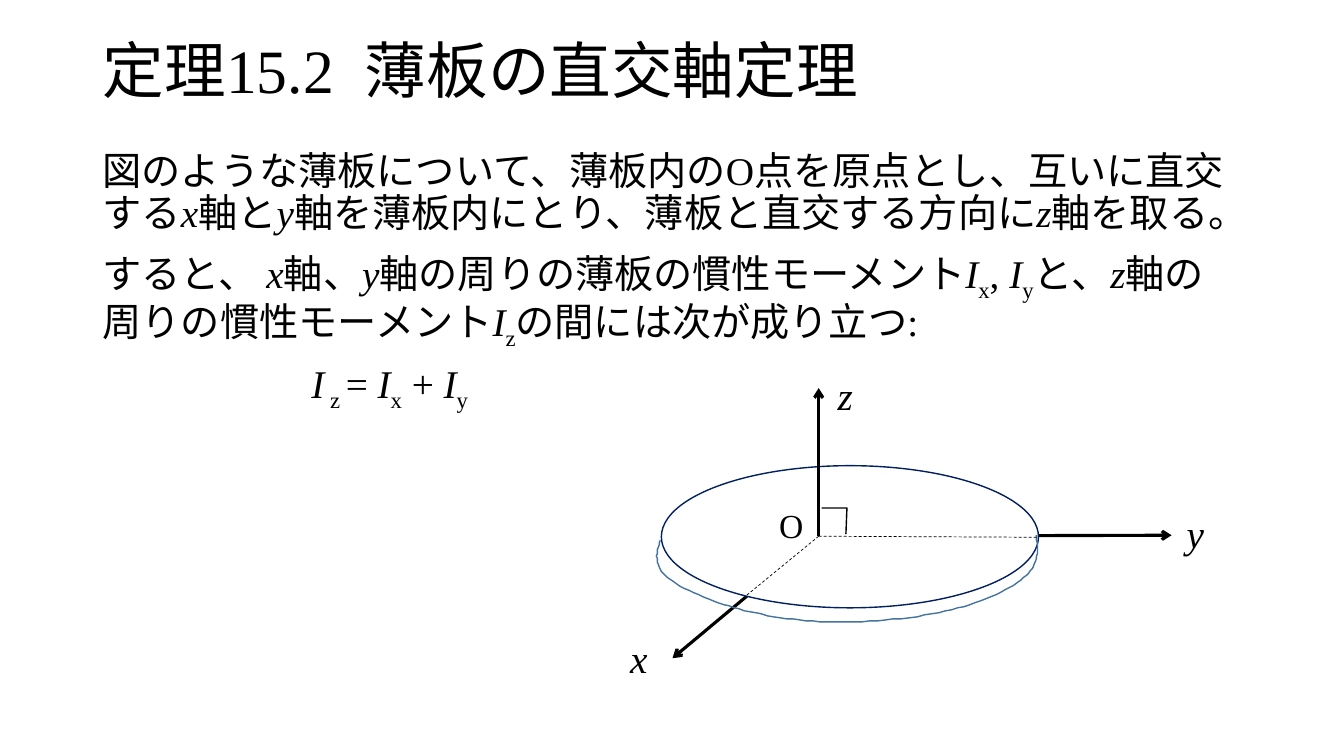
from lxml import etree
from pptx import Presentation
from pptx.dml.color import RGBColor
from pptx.enum.dml import MSO_LINE
from pptx.enum.shapes import MSO_CONNECTOR, MSO_SHAPE
from pptx.enum.text import MSO_ANCHOR, MSO_AUTO_SIZE, PP_ALIGN
from pptx.oxml.ns import qn
from pptx.util import Pt

PX = 9144  # 100 px to the inch
BLACK = RGBColor(0x00, 0x00, 0x00)
WHITE = RGBColor(0xFF, 0xFF, 0xFF)
NAVY = RGBColor(0x00, 0x20, 0x60)
STEEL = RGBColor(0x43, 0x73, 0x9E)
FONT = "Times New Roman"
STRAIGHT, OVAL = MSO_CONNECTOR.STRAIGHT, MSO_SHAPE.OVAL
LEFT, MIDDLE = PP_ALIGN.LEFT, MSO_ANCHOR.MIDDLE
GROW, DASH = MSO_AUTO_SIZE.SHAPE_TO_FIT_TEXT, MSO_LINE.DASH
PLAIN, ITALIC, SUB = "plain", "italic", "sub"

STATEMENT = [
    [("図のような薄板について、薄板内のO点を原点とし、互いに直交する", PLAIN), ("x", ITALIC),
     ("軸と", PLAIN), ("y", ITALIC), ("軸を薄板内にとり、薄板と直交する方向に", PLAIN),
     ("z", ITALIC), ("軸を取る。", PLAIN)],
    [("すると、", PLAIN), (" x", ITALIC), ("軸、", PLAIN), ("y", ITALIC),
     ("軸の周りの薄板の慣性モーメント", PLAIN), ("I", ITALIC), ("x", SUB), (", ", PLAIN),
     ("I", ITALIC), ("y", SUB), ("と、", PLAIN), ("z", ITALIC),
     ("軸の周りの慣性モーメント", PLAIN), ("I", ITALIC), ("z", SUB),
     ("の間には次が成り立つ:", PLAIN)],
]
FORMULA = [("I", ITALIC), (" z ", SUB), ("= ", PLAIN), ("I", ITALIC), ("x", SUB),
           (" + ", PLAIN), ("I", ITALIC), ("y", SUB)]
FORMULA_INDENT = 207


def px(*lengths):
    return [round(v * PX) for v in lengths]


def add_runs(p, runs, size):
    for text, style in runs:
        r = p.add_run()
        r.text = text
        look = {"name": FONT, "size": Pt(size), "italic": style == ITALIC}
        for key, value in look.items():
            setattr(r.font, key, value)
        r.font.color.rgb = BLACK
        if style == SUB:
            r._r.get_or_add_rPr().set("baseline", "-25000")


def set_line(sp, color, width):
    sp.line.color.rgb = color
    sp.line.width = Pt(width)


def add_line(slide, start, end, width, arrow=False):
    sp = slide.shapes.add_connector(STRAIGHT, *px(*start, *end))
    set_line(sp, BLACK, width)
    if arrow:
        etree.SubElement(sp.line._get_or_add_ln(), qn("a:tailEnd"), type="arrow")
    else:
        sp.line.dash_style = DASH
    etree.SubElement(sp._element.spPr, qn("a:effectLst"))


def add_outline(slide, points, color):
    builder = slide.shapes.build_freeform(*points[0], scale=PX)
    builder.add_line_segments(points[1:], close=False)
    sp = builder.convert_to_shape()
    sp.shadow.inherit = False
    sp.fill.background()
    set_line(sp, color, 1)


def bezier(a, b, c, d, steps=16):
    """Points after a on the cubic curve from a to d."""
    for i in range(1, steps + 1):
        t = i / steps
        u = 1 - t
        yield tuple(u**3 * p + 3 * u * u * t * q + 3 * u * t * t * r + t**3 * s
                    for p, q, r, s in zip(a, b, c, d))


def add_label(slide, text, box, size, style):
    sp = slide.shapes.add_textbox(*px(*box))
    tf = sp.text_frame
    tf.word_wrap = False
    tf.auto_size = GROW
    add_runs(tf.paragraphs[0], [(text, style)], size)


def add_title(slide, box):
    sp = slide.shapes.title
    sp.left, sp.top, sp.width, sp.height = px(*box)
    tf = sp.text_frame
    tf.vertical_anchor = MIDDLE
    p = tf.paragraphs[0]
    p.alignment, p.line_spacing = LEFT, 0.9
    add_runs(p, [("定理15.2  薄板の直交軸定理", PLAIN)], 44)


def add_statement(slide, box):
    tf = slide.shapes.add_textbox(*px(*box)).text_frame
    tf.word_wrap = True
    for i, runs in enumerate([*STATEMENT, FORMULA]):
        p = tf.add_paragraph() if i else tf.paragraphs[0]
        p.line_spacing, p.space_before = 0.9, Pt(10)
        add_runs(p, runs, 28)
    p._p.get_or_add_pPr().set("marL", str(FORMULA_INDENT * PX))


def add_plate(slide, box):
    """Thin elliptical plate with its three axes, placed in the box."""
    left, top, _, _ = box

    def at(x, y):
        return left + x, top + y

    origin, rim_x, rim_y = at(197, 169), at(125, 228), at(415, 170)
    add_line(slide, origin, at(52, 290), 2.25, arrow=True)
    add_line(slide, origin, at(547, 168), 2.25, arrow=True)

    sp = slide.shapes.add_shape(OVAL, *px(*at(41, 99), 374, 141))
    sp.shadow.inherit = False
    sp.fill.solid()
    sp.fill.fore_color.rgb = WHITE
    set_line(sp, NAVY, 1)

    edge = [at(*q) for q in [
        (40, 173), (36, 185), (33, 197), (45, 208), (57, 219), (85, 232), (113, 240),
        (140, 247), (175, 254), (211, 254), (247, 255), (297, 250), (329, 242),
        (361, 234), (389, 221), (403, 208), (416, 196), (414, 182), (413, 168)]]
    rim = [edge[0]]
    for i in range(0, len(edge) - 1, 3):
        rim.extend(bezier(*edge[i:i + 4]))
    add_outline(slide, rim, STEEL)

    add_line(slide, origin, at(197, 22), 2.25, arrow=True)
    add_line(slide, origin, rim_y, 0.5)
    add_line(slide, origin, rim_x, 0.5)
    add_outline(slide, [at(200, 141), at(225, 141), at(224, 167)], BLACK)

    for text, x, y, w, h, size, style in [
            ("z", 206, 0, 35, 57, 28, ITALIC), ("y", 552, 137, 38, 57, 28, ITALIC),
            ("x", 0, 261, 38, 57, 28, ITALIC), ("O", 148, 133, 45, 50, 24, PLAIN)]:
        add_label(slide, text, (*at(x, y), w, h), size, style)


def main():
    prs = Presentation()
    prs.slide_width, prs.slide_height = px(1333, 750)
    slide = prs.slides.add_slide(prs.slide_layouts[5])
    add_title(slide, (92, 0, 1150, 145))
    add_statement(slide, (92, 145, 1150, 268))
    add_plate(slide, (615, 363, 590, 318))
    prs.save("out.pptx")


if __name__ == "__main__":
    main()
